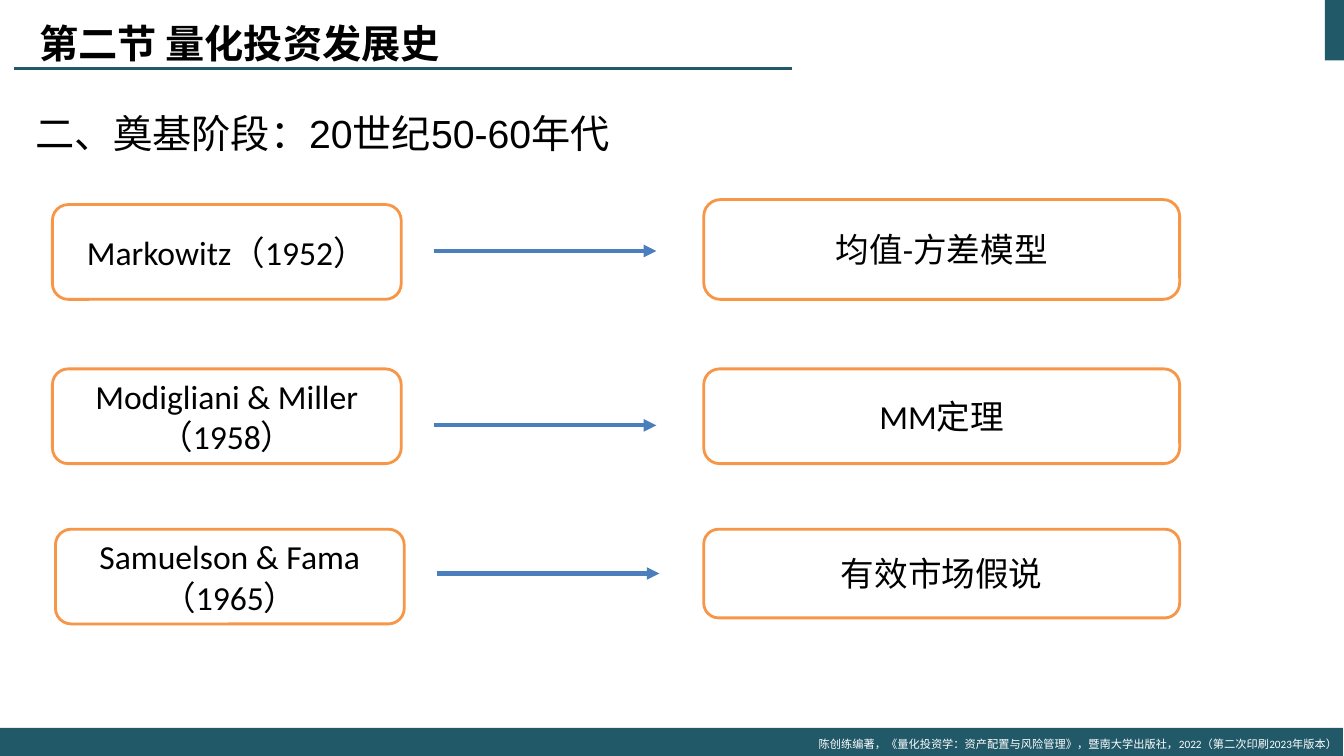
from pptx import Presentation
from pptx.dml.color import RGBColor
from pptx.enum.shapes import MSO_CONNECTOR, MSO_SHAPE
from pptx.enum.text import MSO_ANCHOR, PP_ALIGN
from pptx.oxml.ns import qn
from pptx.util import Inches, Pt
from lxml.etree import SubElement

TEAL, ORANGE, BLUE = "215968", "F79646", "4B7EBC"
BLACK, WHITE = "000000", "FFFFFF"
CJK_FONT = "Noto Sans CJK SC"


def color(value):
    return RGBColor.from_string(value)


def write(shape, text, size, font_name, text_color=BLACK, bold=False,
          align=PP_ALIGN.LEFT, anchor=MSO_ANCHOR.MIDDLE, line_spacing=None):
    frame = shape.text_frame
    frame.word_wrap = True
    frame.vertical_anchor = anchor
    frame.text = text
    for paragraph in frame.paragraphs:
        paragraph.alignment = align
        paragraph.line_spacing = line_spacing
        for run in paragraph.runs:
            font = run.font
            font.name, font.size, font.bold = font_name, Pt(size), bold
            font.color.rgb = color(text_color)
            SubElement(font._element, qn("a:ea")).set("typeface", CJK_FONT)


def add_text(slide, box, text, size, font_name, **style):
    shape = slide.shapes.add_textbox(*map(Inches, box))
    write(shape, text, size, font_name, **style)


def add_box(slide, kind, box, fill, outline=None):
    shape = slide.shapes.add_shape(kind, *map(Inches, box))
    shape.shadow.inherit = False
    shape.fill.solid()
    shape.fill.fore_color.rgb = color(fill)
    if outline:
        shape.line.color.rgb = color(outline)
        shape.line.width = Pt(2)
    else:
        shape.line.fill.background()
    return shape


def add_line(slide, left, right, y, line_color, width, arrow=False):
    line = slide.shapes.add_connector(
        MSO_CONNECTOR.STRAIGHT, *map(Inches, (left, y, right, y)))
    line.line.color.rgb = color(line_color)
    line.line.width = Pt(width)
    if arrow:
        SubElement(line.line._get_or_add_ln(), qn("a:tailEnd")).set("type", "triangle")
    SubElement(line._element.spPr, qn("a:effectLst"))


def add_header(slide, left, top, width, height):
    # Corner block, rule and title
    add_box(slide, MSO_SHAPE.RECTANGLE, (left + width - 0.19, top, 0.2, 0.6), TEAL)
    add_line(slide, left + 0.14, left + 7.86, top + 0.68, TEAL, 1.5)
    add_text(slide, (left + 0.29, top, 10.88, height),
             "第二节 量化投资发展史", 28, CJK_FONT, bold=True)


def add_footer(slide, left, top, width, height):
    # Band with the citation at its right end
    add_box(slide, MSO_SHAPE.RECTANGLE, (left, top, width, height), TEAL)
    add_text(slide, (left + 7.97, top + 0.04, 5.39, 0.24),
             "陈创练编著，《量化投资学：资产配置与风险管理》，暨南大学出版社，2022（第二次印刷2023年版本）",
             8, "Calibri", text_color=WHITE, align=PP_ALIGN.RIGHT)


def add_theory_row(slide, author_box, author, arrow_y, theory_box, theory):
    # Author on the left, arrow, theory on the right
    for box, text in ((author_box, author), (theory_box, theory)):
        shape = add_box(slide, MSO_SHAPE.ROUNDED_RECTANGLE, box, WHITE, ORANGE)
        write(shape, text, 24, "Calibri", align=PP_ALIGN.CENTER)
    arrow_left = author_box[0] + 3.78
    add_line(slide, arrow_left, arrow_left + 2.21, arrow_y, BLUE, 3, arrow=True)


def add_theories(slide, left, top):
    add_text(slide, (left, top, 6.67, 0.72), "二、奠基阶段：20世纪50-60年代",
             28, "Arial", anchor=MSO_ANCHOR.TOP, line_spacing=1.5)
    # Author, indent, author top, arrow, theory top, theory height, theory
    rows = [
        ("Markowitz（1952）", 0.27, 1.23, 1.69, 1.18, 0.99, "均值-方差模型"),
        ("Modigliani & Miller\n（1958）", 0.27, 2.86, 3.42, 2.86, 0.94, "MM定理"),
        ("Samuelson & Fama\n（1965）", 0.3, 4.45, 4.89, 4.45, 0.88, "有效市场假说"),
    ]
    for author, indent, author_top, arrow_y, theory_top, theory_height, theory in rows:
        add_theory_row(slide, (left + indent, top + author_top, 3.46, 0.94), author,
                       top + arrow_y,
                       (left + 6.73, top + theory_top, 4.72, theory_height), theory)


def main():
    presentation = Presentation()
    presentation.slide_width = Inches(13.33)
    presentation.slide_height = Inches(7.5)
    slide = presentation.slides.add_slide(presentation.slide_layouts[6])
    add_header(slide, 0, 0, 13.33, 0.85)
    add_footer(slide, 0, 7.22, 13.32, 0.28)
    add_theories(slide, 0.25, 0.8)
    presentation.save("out.pptx")


if __name__ == "__main__":
    main()
